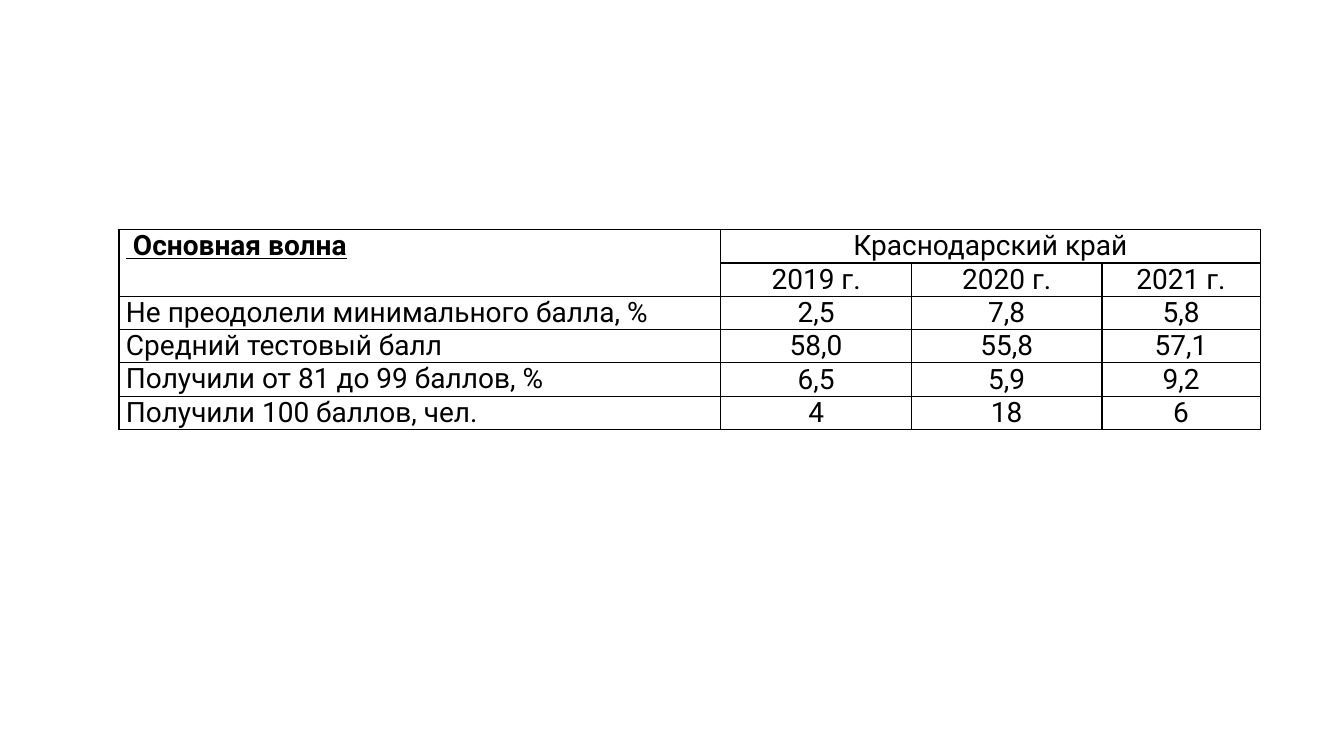
from lxml.etree import SubElement as Sub
from pptx import Presentation
from pptx.dml.color import RGBColor as RGB
from pptx.enum.text import MSO_ANCHOR as Anchor, PP_ALIGN as Align
from pptx.oxml.ns import qn
from pptx.util import Inches, Pt

theme = {"ink": "000000", "font": "Roboto", "size": 20, "line": 1}

rows = [
    [" Основная волна", "Краснодарский край", "", ""],
    ["", "2019 г.", "2020 г.", "2021 г."],
    ["Не преодолели минимального балла, %", "2,5", "7,8", "5,8"],
    ["Средний тестовый балл", "58,0", "55,8", "57,1"],
    ["Получили от 81 до 99 баллов, %", "6,5", "5,9", "9,2"],
    ["Получили 100 баллов, чел.", "4", "18", "6"],
]
widths = [5.97, 1.89, 1.89, 1.57]
height = 0.33


def draw_border(cell):
    props = cell._tc.get_or_add_tcPr()
    for side in ("lnL", "lnR", "lnT", "lnB"):
        line = Sub(props, qn("a:" + side), w=str(Pt(theme["line"])))
        fill = Sub(line, qn("a:solidFill"))
        Sub(fill, qn("a:srgbClr"), val=theme["ink"])


# Slide
deck = Presentation()
deck.slide_width, deck.slide_height = Inches(13.33), Inches(7.5)
slide = deck.slides.add_slide(deck.slide_layouts[6])

# Table grid
table = slide.shapes.add_table(
    len(rows), len(widths), Inches(1.18), Inches(2.28),
    Inches(sum(widths)), Inches(height * len(rows))).table
table.first_row = table.horz_banding = False
for col, width in zip(table.columns, widths):
    col.width = Inches(width)
for row in table.rows:
    row.height = Inches(height)

# Merged headings
table.cell(0, 0).merge(table.cell(1, 0))
table.cell(0, 1).merge(table.cell(0, 3))

# Cells
for r, texts in enumerate(rows):
    for c, text in enumerate(texts):
        cell = table.cell(r, c)
        draw_border(cell)
        cell.fill.background()
        value = r > 1 and c > 0
        box = {
            "margin_left": Inches(0.07), "margin_right": Inches(0.07),
            "margin_top": 0, "margin_bottom": 0,
            "vertical_anchor": Anchor.MIDDLE if value else Anchor.TOP,
        }
        for name, val in box.items():
            setattr(cell, name, val)
        if not text:
            continue
        para = cell.text_frame.paragraphs[0]
        para.alignment = Align.CENTER if c else Align.JUSTIFY
        run = para.add_run()
        run.text = text
        head = r == c == 0
        style = {"name": theme["font"], "size": Pt(theme["size"]),
                 "bold": head, "underline": head}
        for name, val in style.items():
            setattr(run.font, name, val)
        run.font.color.rgb = RGB.from_string(theme["ink"])

deck.save("out.pptx")
